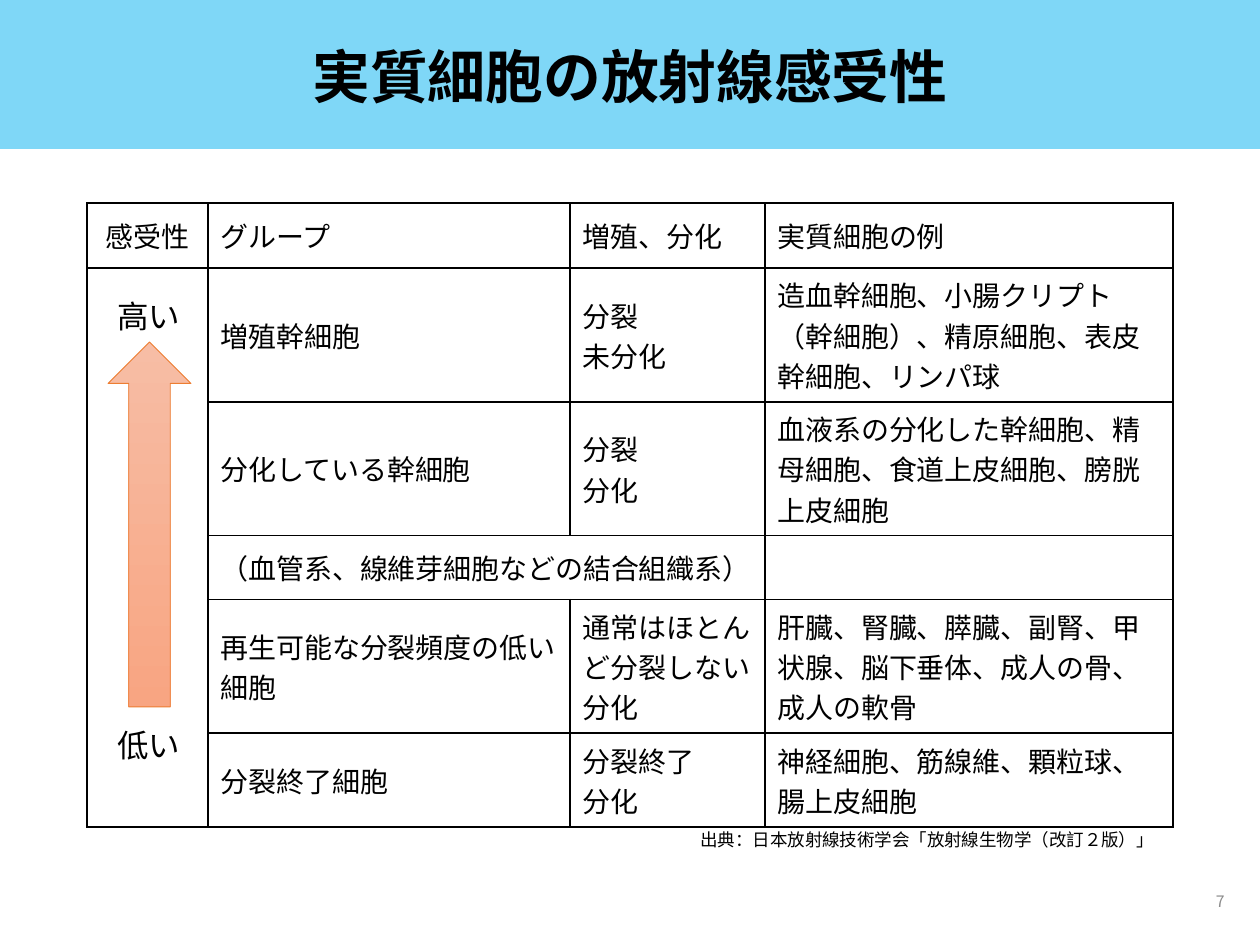
from dataclasses import dataclass

from lxml.etree import SubElement
from pptx import Presentation
from pptx.dml.color import RGBColor as Rgb
from pptx.enum.shapes import MSO_SHAPE as Shape
from pptx.enum.text import MSO_ANCHOR as Anchor, MSO_AUTO_SIZE as AutoSize, PP_ALIGN as Align
from pptx.oxml.ns import qn
from pptx.util import Emu, Pt

PX = 914400 // 126


@dataclass(frozen=True)
class Theme:
    font: str = "Noto Sans CJK JP"
    ink: str = "000000"
    muted: str = "8C8C8C"
    band: str = "00B0F0"
    band_alpha: int = 50
    arrow_top: str = "F7BDA5"
    arrow_bottom: str = "F8A582"
    arrow_line: str = "ED7D31"
    title: int = 33
    level: int = 18
    table: int = 16
    source: int = 10
    number: int = 9


THEME = Theme()
COLUMNS = [121, 362, 195, 408]
ROWS = [65, 134, 133, 64, 133, 94]
CELLS = [
    ["感受性", "グループ", "増殖、分化", "実質細胞の例"],
    ["", "増殖幹細胞", "分裂\n未分化", "造血幹細胞、小腸クリプト（幹細胞）、精原細胞、表皮幹細胞、リンパ球"],
    ["", "分化している幹細胞", "分裂\n分化", "血液系の分化した幹細胞、精母細胞、食道上皮細胞、膀胱上皮細胞"],
    ["", "（血管系、線維芽細胞などの結合組織系）", "", ""],
    ["", "再生可能な分裂頻度の低い細胞", "通常はほとんど分裂しない\n分化",
     "肝臓、腎臓、膵臓、副腎、甲状腺、脳下垂体、成人の骨、成人の軟骨"],
    ["", "分裂終了細胞", "分裂終了\n分化", "神経細胞、筋線維、顆粒球、腸上皮細胞"],
]


def px(*lengths):
    return [Emu(length * PX) for length in lengths]


def write(frame, text, size, color=THEME.ink, align=Align.LEFT, bold=False):
    """Put each line of text in its own paragraph."""
    for index, line in enumerate(text.split("\n")):
        para = frame.add_paragraph() if index else frame.paragraphs[0]
        para.alignment = align
        span = para.add_run()
        span.text = line
        span.font.size = Pt(size)
        span.font.bold = bold
        span.font.name = THEME.font
        span.font.color.rgb = Rgb.from_string(color)
        SubElement(span.font._element, qn("a:ea"), typeface=THEME.font)


def add_label(page, bounds, text, size, wrap=False, anchor=Anchor.TOP, **style):
    frame = page.shapes.add_textbox(*px(*bounds)).text_frame
    frame.word_wrap = wrap
    frame.auto_size = AutoSize.NONE if wrap else AutoSize.SHAPE_TO_FIT_TEXT
    frame.vertical_anchor = anchor
    write(frame, text, size, **style)
    return frame


def add_title_band(page):
    band = page.shapes.add_shape(Shape.RECTANGLE, *px(0, 0, 1260, 149))
    band.shadow.inherit = False
    band.line.fill.background()
    band.fill.solid()
    band.fill.fore_color.rgb = Rgb.from_string(THEME.band)
    color = band.fill._xPr.find(qn("a:solidFill"))[0]
    SubElement(color, qn("a:alpha"), val=str(THEME.band_alpha * 1000))
    title = add_label(page, (87, 26, 1086, 107), "実質細胞の放射線感受性", THEME.title,
                      wrap=True, anchor=Anchor.MIDDLE, align=Align.CENTER, bold=True)
    title.paragraphs[0].line_spacing = 0.9


def style_cell(cell):
    """Clear the banded fill and rule all four sides; borders precede the fill in the XML."""
    cell.vertical_anchor = Anchor.MIDDLE
    properties = cell._tc.get_or_add_tcPr()
    for side in ("lnL", "lnR", "lnT", "lnB"):
        border = SubElement(properties, qn(f"a:{side}"), w=str(Pt(1)))
        fill = SubElement(border, qn("a:solidFill"))
        SubElement(fill, qn("a:srgbClr"), val=THEME.ink)
    cell.fill.background()


def add_sensitivity_table(page):
    bounds = px(87, 203, sum(COLUMNS), sum(ROWS))
    table = page.shapes.add_table(len(ROWS), len(COLUMNS), *bounds).table
    for column, width in zip(table.columns, px(*COLUMNS)):
        column.width = width
    for row, height in zip(table.rows, px(*ROWS)):
        row.height = height
    for r, texts in enumerate(CELLS):
        for c, text in enumerate(texts):
            cell = table.cell(r, c)
            style_cell(cell)
            if text:
                align = Align.LEFT if c else Align.CENTER
                write(cell.text_frame, text, THEME.table, align=align)
    table.cell(1, 0).merge(table.cell(5, 0))
    table.cell(3, 1).merge(table.cell(3, 2))


def add_sensitivity_arrow(page):
    arrow = page.shapes.add_shape(Shape.UP_ARROW, *px(108, 342, 83, 365))
    arrow.shadow.inherit = False
    arrow.fill.gradient()
    arrow.fill.gradient_angle = 270
    for stop, color in zip(arrow.fill.gradient_stops, (THEME.arrow_top, THEME.arrow_bottom)):
        stop.color.rgb = Rgb.from_string(color)
    arrow.line.color.rgb = Rgb.from_string(THEME.arrow_line)
    arrow.line.width = Pt(0.5)
    for text, top in (("高い", 291), ("低い", 720)):
        add_label(page, (105, top, 89, 50), text, THEME.level)


def main():
    deck = Presentation()
    deck.slide_width, deck.slide_height = px(1260, 945)
    page = deck.slides.add_slide(deck.slide_layouts[6])
    add_title_band(page)
    add_sensitivity_table(page)
    add_label(page, (954, 876, 283, 50), "7", THEME.number, wrap=True,
              anchor=Anchor.MIDDLE, color=THEME.muted, align=Align.RIGHT)
    add_label(page, (688, 823, 485, 34), "出典：日本放射線技術学会「放射線生物学（改訂２版）」", THEME.source)
    add_sensitivity_arrow(page)
    deck.save("out.pptx")


if __name__ == "__main__":
    main()
